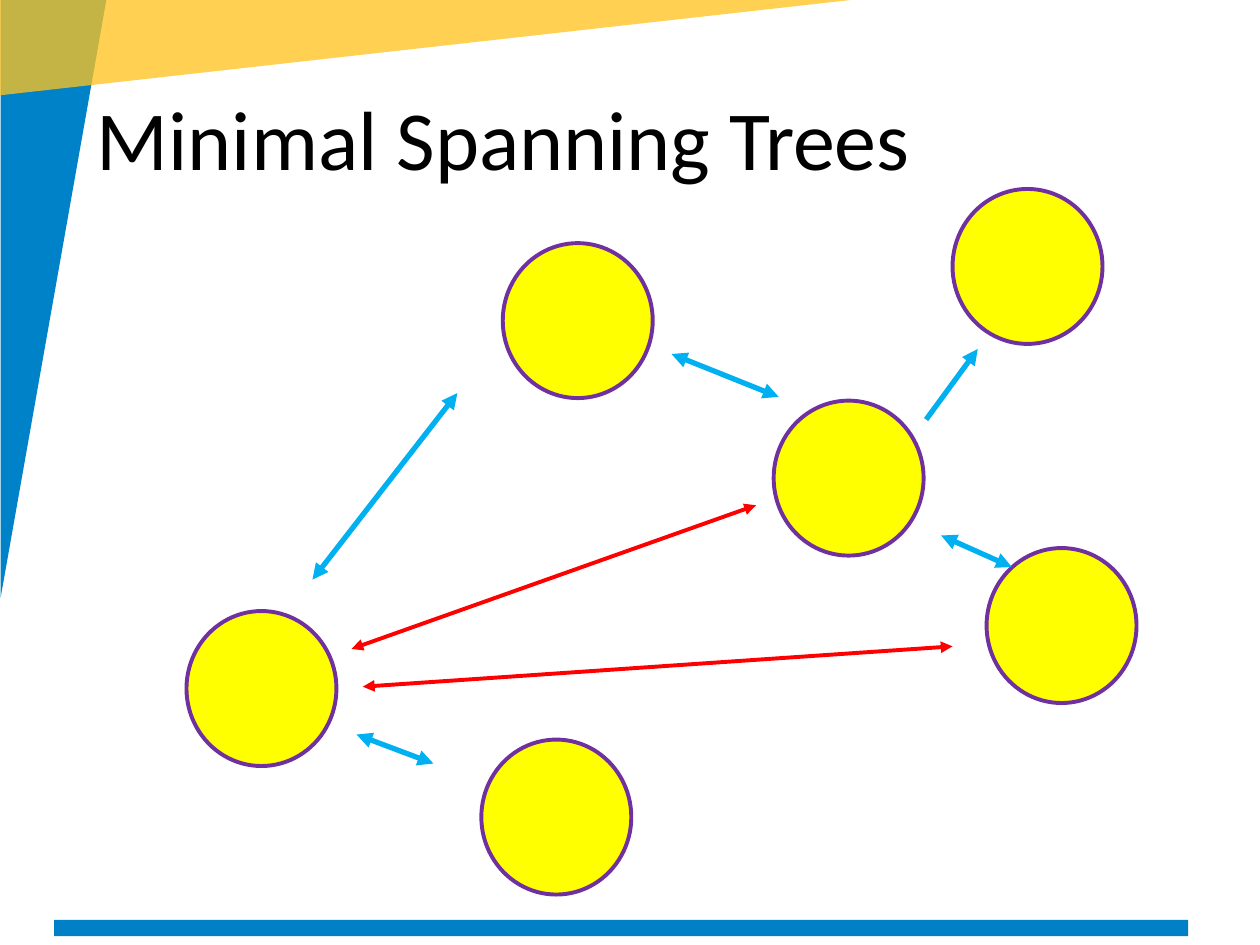
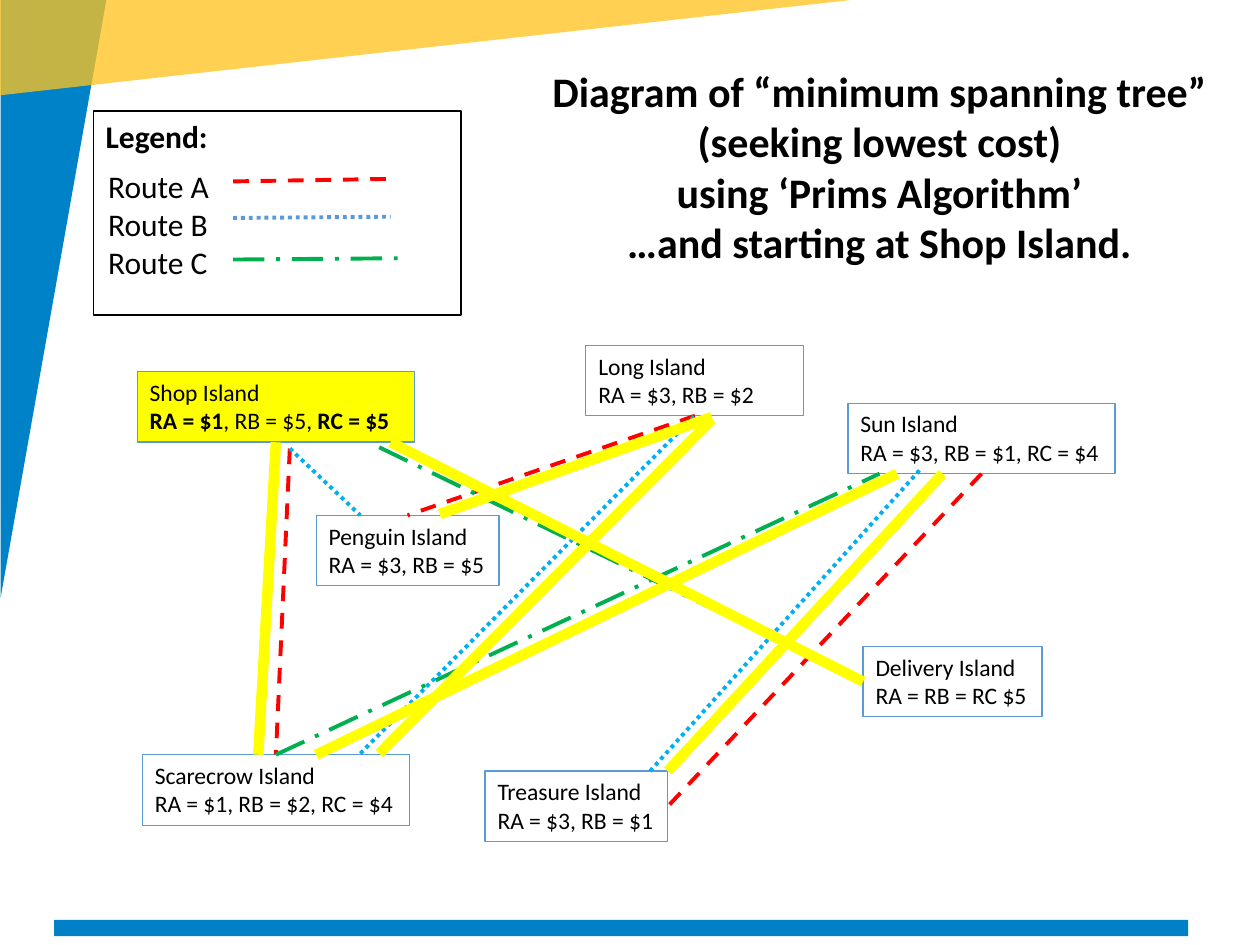
"""Build two slides on minimal spanning trees."""
from lxml.etree import SubElement as Sub
from pptx import Presentation
from pptx.dml.color import RGBColor as RGB
from pptx.enum.dml import MSO_LINE as Dash
from pptx.enum.shapes import MSO_CONNECTOR as Con, MSO_SHAPE as Geo
from pptx.enum.text import MSO_ANCHOR as Anchor, PP_ALIGN as Align
from pptx.oxml.ns import qn
from pptx.util import Inches as In, Pt

HUES = {"blue": "0082C8", "bar": "0081C7", "gold": "FFC31E", "ink": "000000",
        "yellow": "FFFF00", "purple": "7030A0", "sky": "00B0F0",
        "red": "FF0000", "green": "00B050", "edge": "5B9BD5"}
TONE = {name: RGB.from_string(code) for name, code in HUES.items()}
BASE = {"name": "Calibri", "bold": False}


def write(shape, lines, size, align=Align.LEFT, wrap=True, **extra):
    frame = shape.text_frame
    frame.word_wrap = wrap
    frame.vertical_anchor = Anchor.TOP
    for i, line in enumerate(lines):
        para = frame.add_paragraph() if i else frame.paragraphs[0]
        para.alignment = align
        for j, part in enumerate(line.split("*")):
            if part:
                run = para.add_run()
                run.text = part
                form = {**BASE, "size": Pt(size), "bold": j % 2 == 1, **extra}
                for key, val in form.items():
                    setattr(run.font, key, val)
                run.font.color.rgb = TONE["ink"]


def link(slide, start, end, tone, width, dash=None, tips=()):
    spots = [spot if len(spot) == 2 and not hasattr(spot[0], "left") else (0, 0)
             for spot in (start, end)]
    line = slide.shapes.add_connector(
        Con.STRAIGHT, *[In(n) for spot in spots for n in spot])
    for spot, join in ((start, line.begin_connect), (end, line.end_connect)):
        if hasattr(spot[0], "left"):
            join(*spot)
    for key, val in {"width": Pt(width), "dash_style": dash}.items():
        setattr(line.line, key, val)
    line.line.color.rgb = TONE[tone]
    props = line.element.spPr
    for tip in tips:
        Sub(props.find(qn("a:ln")), qn(f"a:{tip}End"), type="triangle")
    Sub(props, qn("a:effectLst"))


deck = Presentation()
deck.slide_width, deck.slide_height = In(10), In(7.5)
tree, map_ = [deck.slides.add_slide(deck.slide_layouts[6]) for _ in range(2)]

BANDS = [
    (Geo.RIGHT_TRIANGLE, (-1.95, 1.95, 4.75, 0.84), 90, "blue"),
    (Geo.RIGHT_TRIANGLE, (-0.21, -0.02, 7.14, 0.8), 180, "gold"),
    (Geo.RECTANGLE, (0.43, 7.3, 9, 0.13), 0, "bar"),
]
for slide in (tree, map_):
    for kind, place, turn, tone in BANDS:
        band = slide.shapes.add_shape(kind, *map(In, place))
        band.shadow.inherit = False
        band.rotation = turn
        band.fill.solid()
        band.fill.fore_color.rgb = TONE[tone]
        band.line.fill.background()
        if tone == "gold":
            band.element.spPr.xfrm.set("flipH", "1")
            Sub(next(band.element.spPr.iter(qn("a:srgbClr"))),
                qn("a:alpha"), val="77000")

title = tree.shapes.add_textbox(In(0.67), In(0.64), In(6.72), In(0.91))
write(title, ["Minimal Spanning Trees"], 48, wrap=False)

NODES = [(1.48, 4.85), (6.14, 3.18), (3.82, 5.87),
         (3.99, 1.93), (7.56, 1.5), (7.83, 4.35)]
for left, top in NODES:
    node = tree.shapes.add_shape(Geo.OVAL, In(left), In(top), In(1.19), In(1.23))
    node.shadow.inherit = False
    node.fill.solid()
    node.fill.fore_color.rgb = TONE["yellow"]
    node.line.color.rgb = TONE["purple"]
    node.line.width = Pt(2.25)

BOTH = ("head", "tail")
link(tree, (7.35, 3.33), (7.76, 2.77), "sky", 3, tips=("tail",))
for start, end in [((2.48, 4.6), (3.63, 3.12)), ((5.33, 2.81), (6.18, 3.15)),
                   ((2.83, 5.83), (3.44, 6.06)), ((7.47, 4.25), (8.03, 4.5))]:
    link(tree, start, end, "sky", 3, tips=BOTH)
for start, end in [((2.79, 5.15), (6, 4.01)), ((2.88, 5.45), (7.56, 5.13))]:
    link(tree, start, end, "red", 2.25, tips=BOTH)

ISLES = [
    ("Long", (4.65, 2.74, 1.73), "RA = $3, RB = $2"),
    ("Scarecrow", (1.13, 5.99, 2.12), "RA = $1, RB = $2, RC = $4"),
    ("Treasure", (3.85, 6.12, 1.45), "RA = $3, RB = $1"),
    ("Penguin", (2.51, 4.09, 1.45), "RA = $3, RB = $5"),
    ("Delivery", (6.85, 5.13, 1.42), "RA = RB = RC $5"),
    ("Sun", (6.73, 3.2, 2.12), "RA = $3, RB = $1, RC = $4"),
    ("Shop", (1.09, 2.95, 2.2), "*RA = $1*, RB = $5, *RC = $5*"),
]
isle = {}
for name, place, costs in ISLES:
    box = map_.shapes.add_shape(Geo.RECTANGLE, *map(In, place), In(0.56))
    box.shadow.inherit = False
    if name == "Shop":
        box.fill.solid()
        box.fill.fore_color.rgb = TONE["yellow"]
    else:
        box.fill.background()
    box.line.color.rgb = TONE["edge"]
    box.line.width = Pt(0.75)
    write(box, [f"{name} Island", costs], 13.5, wrap=name in ("Long", "Shop"))
    isle[name] = box

key = map_.shapes.add_shape(Geo.RECTANGLE, In(0.74), In(0.88), In(2.92), In(1.62))
key.shadow.inherit = False
key.fill.background()
key.line.color.rgb = TONE["ink"]
key.line.width = Pt(0.75)
write(key, ["Legend:"], 18, bold=True)
names = map_.shapes.add_textbox(In(0.76), In(1.28), In(1.01), In(1.01))
write(names, [f"Route {route}" for route in "ABC"], 18, wrap=False)

DASHES = {"red": Dash.DASH, "edge": Dash.ROUND_DOT, "sky": Dash.ROUND_DOT,
          "green": Dash.LONG_DASH_DOT}
TOP, LEFT, BASE_SIDE, RIGHT = range(4)
ROUTES = [
    ((1.85, 1.44), (3.1, 1.42), "red"),
    ((1.85, 1.73), (3.1, 1.72), "edge"),
    ((1.85, 2.06), (3.17, 2.05), "green"),
    ((2.3, 3.56), (isle["Scarecrow"], TOP), "red"),
    ((isle["Long"], BASE_SIDE), (isle["Penguin"], TOP), "red"),
    ((2.3, 3.56), (2.86, 4.09), "sky"),
    ((2.86, 5.98), (isle["Long"], BASE_SIDE), "sky"),
    ((5.16, 6.12), (7.3, 3.73), "sky"),
    ((3.01, 3.55), (isle["Delivery"], LEFT), "green"),
    ((isle["Scarecrow"], TOP), (6.98, 3.76), "green"),
    ((isle["Sun"], BASE_SIDE), (isle["Treasure"], RIGHT), "red"),
]
for start, end, tone in ROUTES:
    link(map_, start, end, tone, 2.25, DASHES[tone])

head = map_.shapes.add_textbox(In(4.23), In(0.47), In(5.5), In(1.72))
write(head, ["Diagram of “minimum spanning tree” (seeking lowest cost)",
             "using ‘Prims Algorithm’", "…and starting at Shop Island."],
      24, Align.CENTER, bold=True)

BEST = [
    ((isle["Shop"], BASE_SIDE), (2.05, 5.99)),
    ((5.65, 3.33), (3.01, 5.98)),
    ((5.65, 3.31), (3.49, 4.08)),
    ((7.12, 3.76), (2.51, 5.99)),
    ((7.48, 3.76), (5.3, 6.12)),
    ((3.1, 3.51), (isle["Delivery"], LEFT)),
]
for start, end in BEST:
    link(map_, start, end, "yellow", 6)

deck.save("out.pptx")
